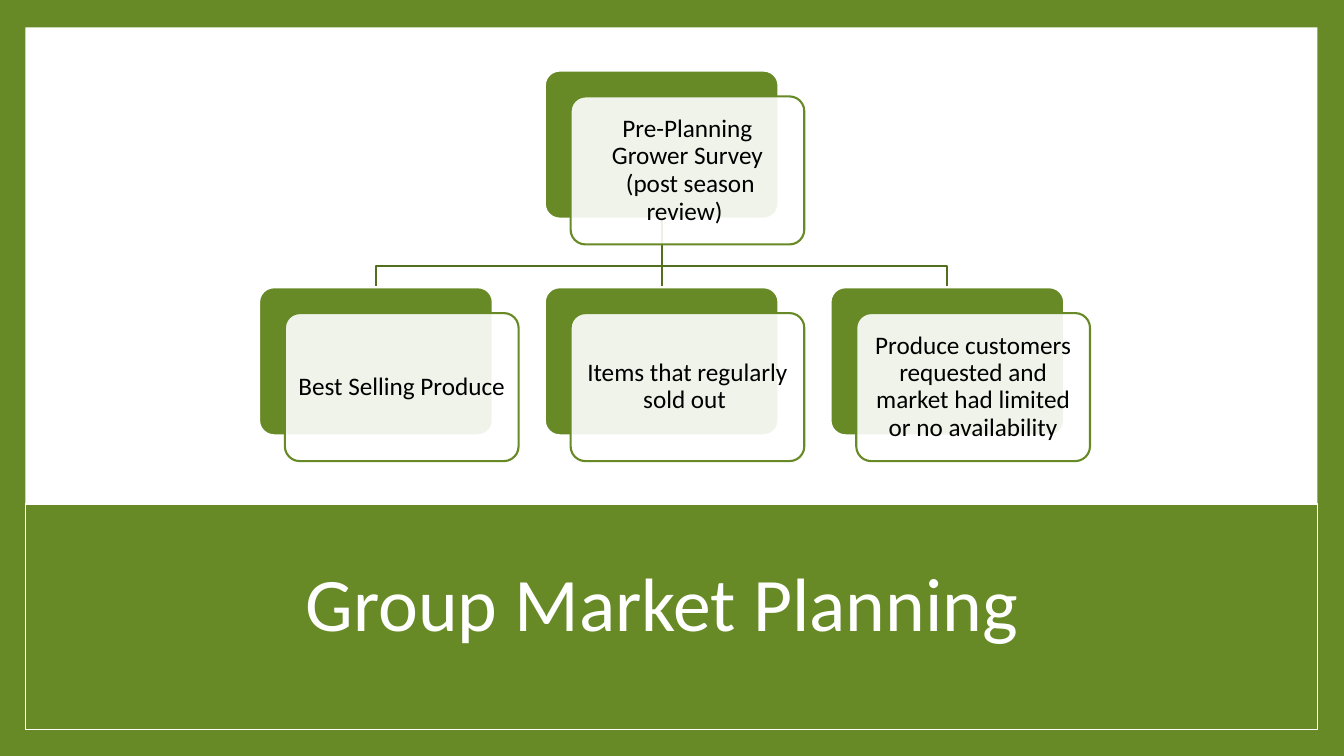
from dataclasses import dataclass

from lxml.etree import SubElement
from pptx import Presentation
from pptx.dml.color import RGBColor
from pptx.enum.shapes import MSO_CONNECTOR, MSO_SHAPE
from pptx.enum.text import MSO_ANCHOR, MSO_AUTO_SIZE, PP_ALIGN
from pptx.oxml.ns import qn
from pptx.util import Cm, Pt


@dataclass(frozen=True)
class Theme:
    green: RGBColor = RGBColor(0x67, 0x8A, 0x26)
    dark_green: RGBColor = RGBColor(0x52, 0x6F, 0x1E)
    white: RGBColor = RGBColor(0xFF, 0xFF, 0xFF)
    black: RGBColor = RGBColor(0, 0, 0)
    font: str = "Calibri"
    title_size: Pt = Pt(54)
    card_size: Pt = Pt(18)
    frame_line: Pt = Pt(1)
    chart_line: Pt = Pt(1.5)


@dataclass(frozen=True)
class Box:
    """A rectangle in centimetres."""
    left: float
    top: float
    width: float
    height: float

    @property
    def lengths(self) -> tuple:
        return Cm(self.left), Cm(self.top), Cm(self.width), Cm(self.height)


@dataclass(frozen=True)
class Node:
    """A card of the chart, placed by column and row."""
    column: int
    row: int
    paragraphs: tuple[str, ...]

    @property
    def box(self) -> Box:
        return Box(FIRST_LEFT + self.column * COLUMN_STEP, ROW_TOPS[self.row],
                   CARD_WIDTH, CARD_HEIGHT)

    @property
    def center(self) -> float:
        return self.box.left + CARD_WIDTH / 2


THEME = Theme()
SLIDE = Box(0, 0, 33.87, 19.05)
PANEL = Box(0.64, 0.69, 32.56, 17.7)
BANNER = Box(0.64, 12.7, 32.56, 5.69)
TITLE = Box(3.18, 13.41, 27.43, 3.76)

FIRST_LEFT, COLUMN_STEP = 6.53, 7.2
ROW_TOPS = (1.78, 7.24)
CARD_WIDTH, CARD_HEIGHT = 5.89, 3.73
CARD_SHIFT = 0.65
CARD_INSET = 0.18
ELBOW_TOP = 6.71

ROOT = Node(1, 0, ("Pre-Planning Grower Survey", " (post season review) "))
BRANCHES = (
    Node(0, 1, ("Best Selling Produce ",)),
    Node(1, 1, ("Items that regularly sold out ",)),
    Node(2, 1, ("Produce customers requested and market had limited "
                "or no availability",)),
)


def apply_format(target, values: dict) -> None:
    for name, value in values.items():
        setattr(target, name, value)


def set_line(shape, color: RGBColor, width: Pt) -> None:
    shape.line.color.rgb = color
    shape.line.width = width


def add_block(slide, box: Box, fill: RGBColor, line: RGBColor | None = None,
              line_width: Pt = THEME.frame_line, preset=MSO_SHAPE.RECTANGLE):
    shape = slide.shapes.add_shape(preset, *box.lengths)
    shape.shadow.inherit = False
    shape.fill.solid()
    shape.fill.fore_color.rgb = fill
    if line is None:
        shape.line.fill.background()
    else:
        set_line(shape, line, line_width)
    return shape


def write_text(shape, paragraphs: tuple[str, ...], size: Pt, color: RGBColor,
               frame_format: dict, space_after: Pt = Pt(0)) -> None:
    frame = shape.text_frame
    apply_format(frame, {"word_wrap": True, "auto_size": MSO_AUTO_SIZE.NONE,
                         "vertical_anchor": MSO_ANCHOR.MIDDLE, **frame_format})
    frame.text = "\n".join(paragraphs)
    for paragraph in frame.paragraphs:
        apply_format(paragraph, {"alignment": PP_ALIGN.CENTER, "line_spacing": 0.9,
                                 "space_before": Pt(0), "space_after": space_after})
        for run in paragraph.runs:
            apply_format(run.font, {"name": THEME.font, "size": size})
            run.font.color.rgb = color


def add_branch_line(slide, parent: Node, child: Node) -> None:
    """Join two cards, with an elbow unless they share a column."""
    start_x, start_y = Cm(parent.center), Cm(parent.box.top + CARD_HEIGHT)
    end_x, end_y = Cm(child.center), Cm(child.box.top)
    if parent.column == child.column:
        line = slide.shapes.add_connector(MSO_CONNECTOR.STRAIGHT,
                                          start_x, start_y, end_x, end_y)
        SubElement(line.element.spPr, qn("a:effectLst"))
    else:
        builder = slide.shapes.build_freeform(start_x, start_y)
        builder.add_line_segments([(start_x, Cm(ELBOW_TOP)), (end_x, Cm(ELBOW_TOP)),
                                   (end_x, end_y)], close=False)
        line = builder.convert_to_shape()
        line.shadow.inherit = False
        line.fill.background()
    set_line(line, THEME.dark_green, THEME.chart_line)


def add_card(slide, node: Node) -> None:
    """Draw a green back plate and a translucent text card shifted over it."""
    back = node.box
    front = Box(back.left + CARD_SHIFT, back.top + CARD_SHIFT, back.width, back.height)
    plates = [
        add_block(slide, box, fill, line, THEME.chart_line, MSO_SHAPE.ROUNDED_RECTANGLE)
        for box, fill, line in ((back, THEME.green, THEME.white),
                                (front, THEME.white, THEME.green))
    ]
    for plate in plates:
        plate.adjustments[0] = 0.1
    card = plates[-1]
    fill_color = card.element.spPr.find(qn("a:solidFill"))[0]
    SubElement(fill_color, qn("a:alpha"), val="90000")
    margins = {f"margin_{side}": Cm(CARD_INSET)
               for side in ("left", "top", "right", "bottom")}
    write_text(card, node.paragraphs, THEME.card_size, THEME.black, margins, Pt(1))


def add_title(slide) -> None:
    title = slide.shapes.title
    apply_format(title, dict(zip(("left", "top", "width", "height"), TITLE.lengths)))
    write_text(title, ("Group Market Planning ",), THEME.title_size, THEME.white, {})
    title.element.getparent().append(title.element)  # bring in front of the banner


def main() -> None:
    presentation = Presentation()
    apply_format(presentation, {"slide_width": Cm(SLIDE.width),
                                "slide_height": Cm(SLIDE.height)})
    slide = presentation.slides.add_slide(presentation.slide_layouts[5])
    add_block(slide, SLIDE, THEME.green)
    add_block(slide, PANEL, THEME.white)
    add_block(slide, BANNER, THEME.green, THEME.white)
    add_title(slide)
    for branch in reversed(BRANCHES):
        add_branch_line(slide, ROOT, branch)
    for node in (ROOT, *BRANCHES):
        add_card(slide, node)
    presentation.save("out.pptx")


if __name__ == "__main__":
    main()
